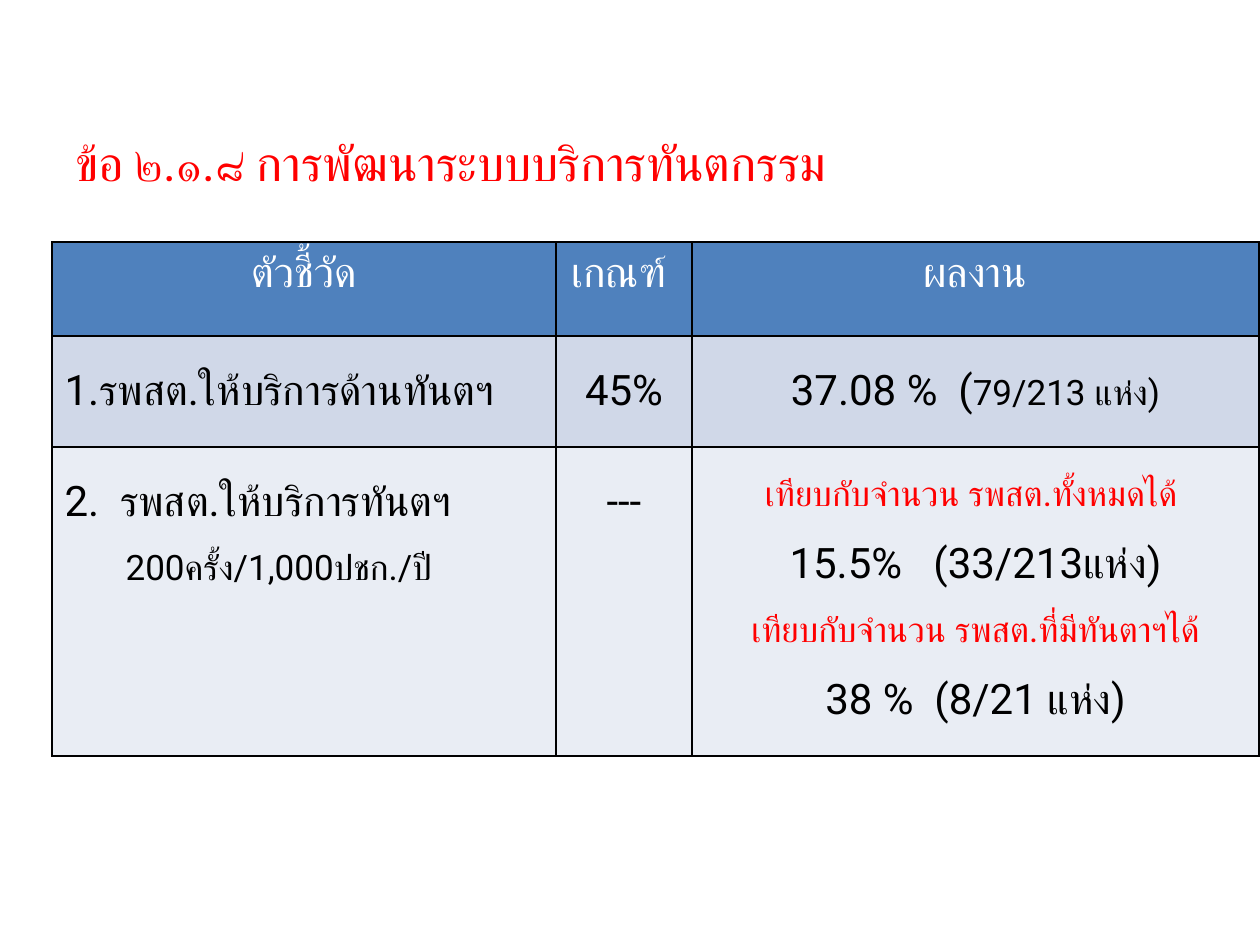
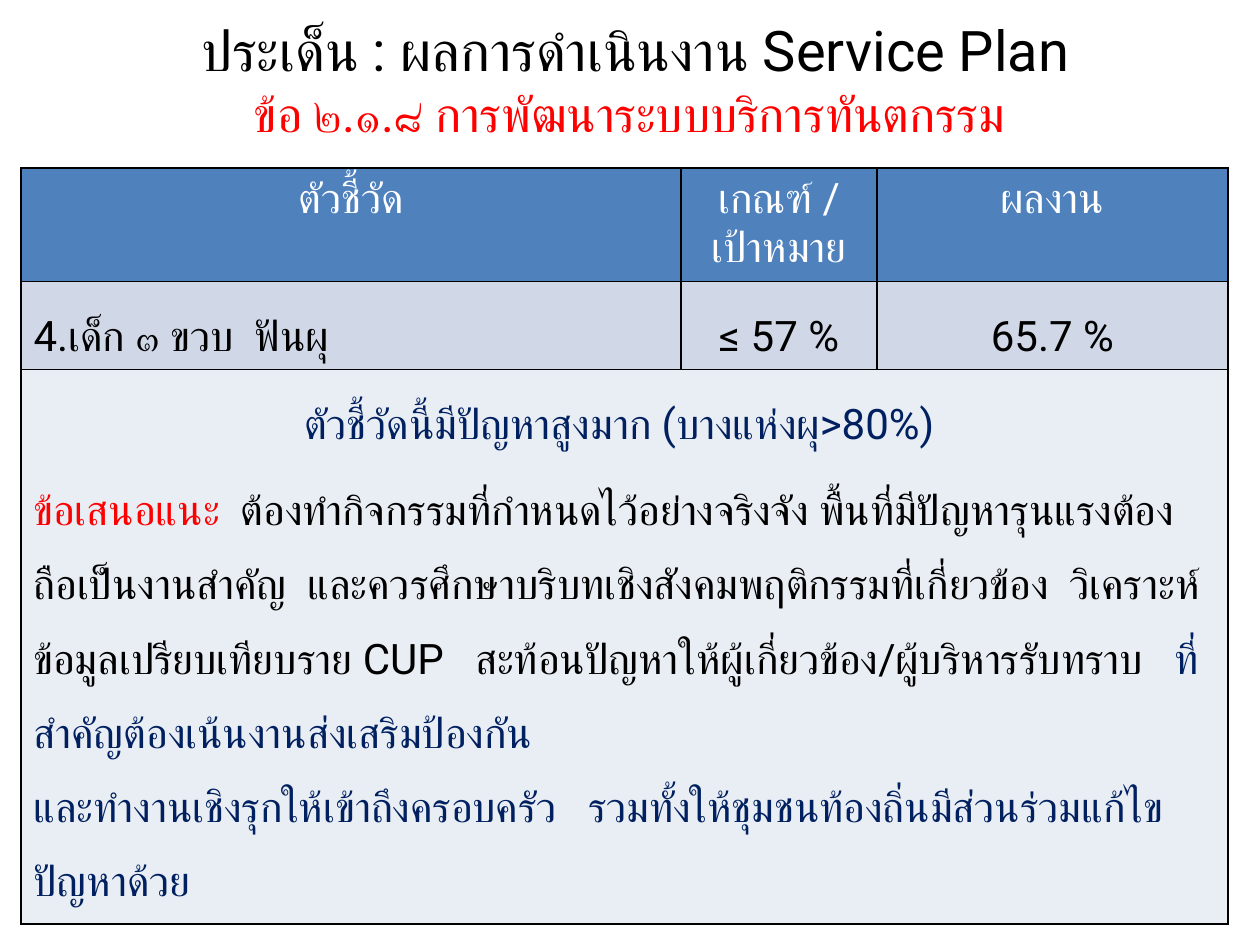
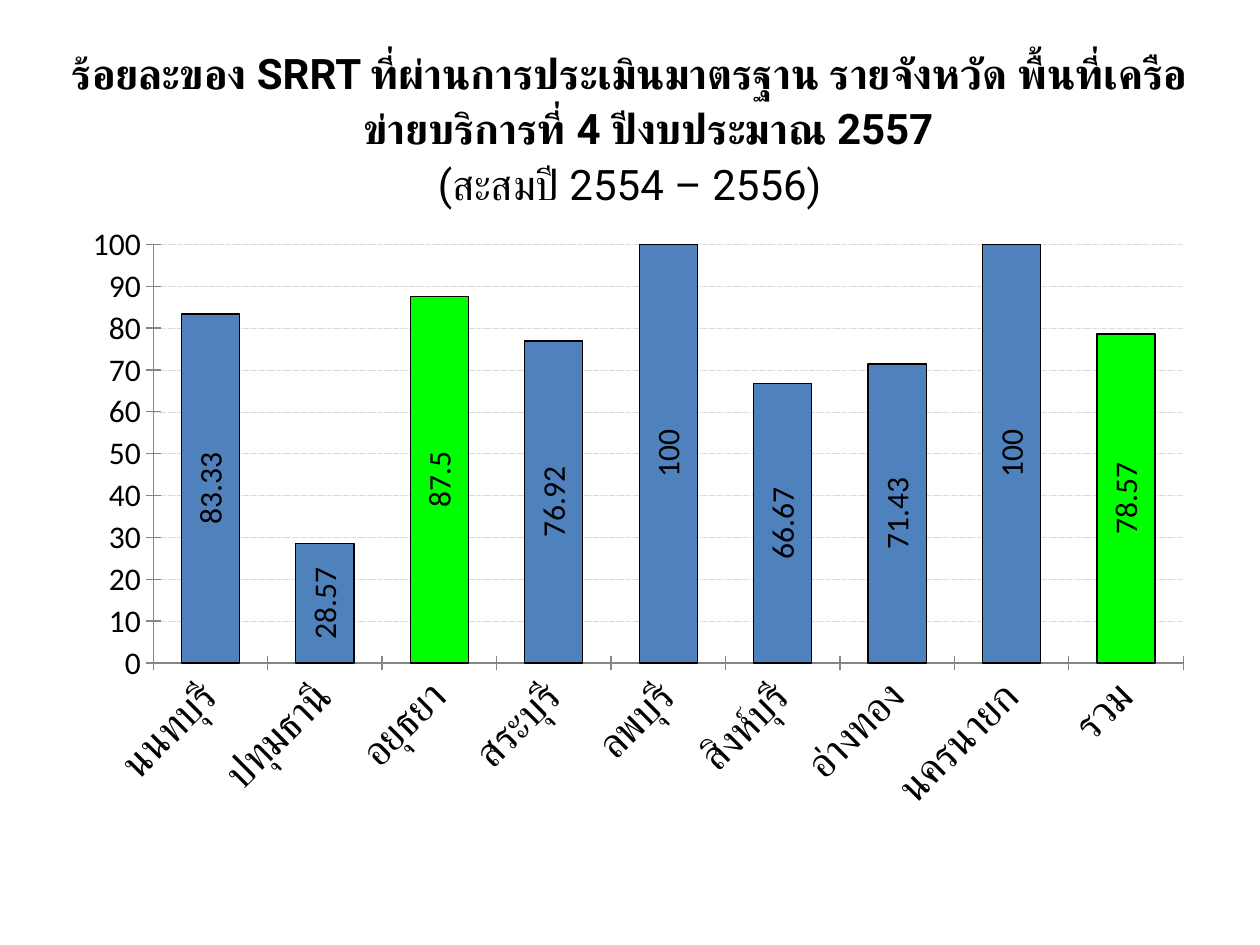
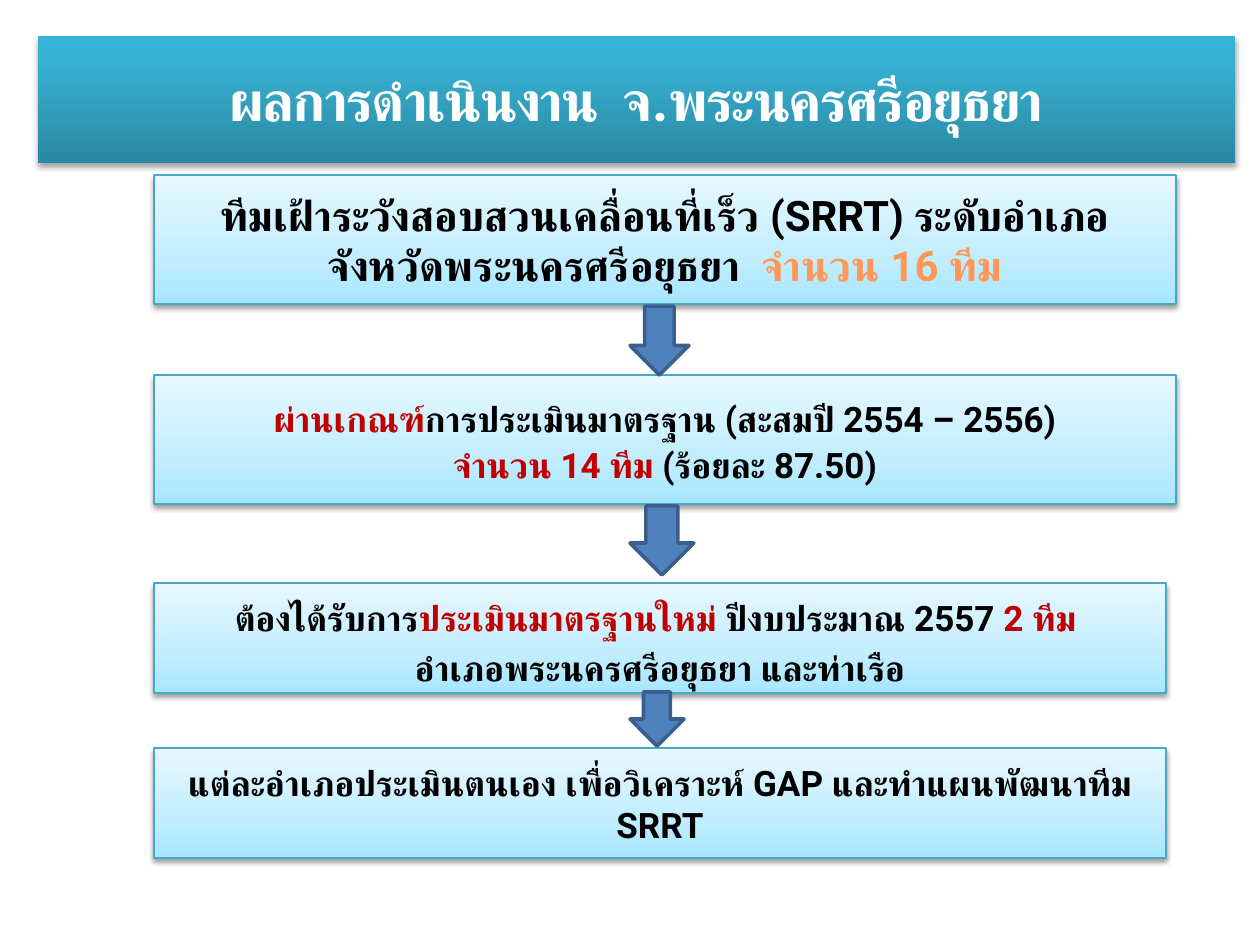
from dataclasses import dataclass

from lxml import etree
from pptx import Presentation
from pptx.chart.data import CategoryChartData
from pptx.dml.color import RGBColor
from pptx.enum.chart import XL_CHART_TYPE, XL_LABEL_POSITION, XL_TICK_MARK
from pptx.enum.dml import MSO_LINE
from pptx.enum.shapes import MSO_SHAPE
from pptx.enum.text import MSO_ANCHOR, PP_ALIGN
from pptx.oxml.ns import qn
from pptx.util import Emu, Pt

LEFT, CENTER = PP_ALIGN.LEFT, PP_ALIGN.CENTER
TOP, MIDDLE = MSO_ANCHOR.TOP, MSO_ANCHOR.MIDDLE
RECTANGLE, DOWN_ARROW = MSO_SHAPE.RECTANGLE, MSO_SHAPE.DOWN_ARROW
STACKED = XL_CHART_TYPE.COLUMN_STACKED
LABEL_CENTER = XL_LABEL_POSITION.CENTER
TICK_CROSS = XL_TICK_MARK.CROSS
DASH = MSO_LINE.SQUARE_DOT
PX_PER_INCH = 126
HANGING = 48


@dataclass(frozen=True)
class Gradient:
    stops: tuple[tuple[int, str], ...]
    angle: int


@dataclass(frozen=True)
class Theme:
    font: str = "Roboto"
    chart_font: str = "Calibri"
    black: str = "000000"
    white: str = "FFFFFF"
    red: str = "FF0000"
    dark_red: str = "C00000"
    navy: str = "002060"
    blue: str = "4F81BD"
    arrow_line: str = "3A5F8C"
    green: str = "00FF00"
    band: str = "D0D8E8"
    pale_band: str = "E9EDF4"
    grid: str = "D9D9D9"
    axis: str = "868686"
    box_line: str = "46AAC5"
    title_fill: Gradient = Gradient(((0, "2A88A2"), (80, "37B1D2"), (100, "34B4D6")), 270)
    box_fill: Gradient = Gradient(((0, "A7E6FF"), (35, "C1EDFF"), (100, "E7F8FF")), 270)
    orange: Gradient = Gradient(((0, "9D4700"), (78, "FF9856"), (100, "FFF5F1")), 90)
    title: int = 32
    subtitle: int = 28
    body: int = 24
    small: int = 20
    label: int = 18


THEME = Theme()


@dataclass(frozen=True)
class Span:
    text: str
    color: str | Gradient = THEME.black
    size: int = THEME.body
    bold: bool = False
    tracking: int = 0


@dataclass(frozen=True)
class Line:
    spans: tuple[Span, ...]
    align: PP_ALIGN = LEFT
    spacing: float = 1.0
    before: float = 0
    after: float = 0
    margin: int = 0
    indent: int = 0


@dataclass(frozen=True)
class Area:
    left: int
    top: int
    width: int
    height: int

    def emu(self) -> tuple[Emu, ...]:
        return tuple(px(n) for n in (self.left, self.top, self.width, self.height))


@dataclass(frozen=True)
class TableRow:
    height: int
    fill: str
    cells: tuple[tuple[Line, ...], ...]


@dataclass(frozen=True)
class Step:
    area: Area
    lines: tuple[Line, ...]


def px(length: int) -> Emu:
    return Emu(round(length * 914400 / PX_PER_INCH))


def rgb(color: str) -> RGBColor:
    return RGBColor.from_string(color)


# ---- Shared drawing ----

def add_color(parent, color: str):
    node = etree.SubElement(parent, qn("a:srgbClr"), val=color)
    return node


def set_gradient(fill, parent, gradient: Gradient) -> None:
    fill.background()
    node = etree.Element(qn("a:gradFill"), rotWithShape="1")
    stops = etree.SubElement(node, qn("a:gsLst"))
    for position, color in gradient.stops:
        add_color(etree.SubElement(stops, qn("a:gs"), pos=str(position * 1000)), color)
    etree.SubElement(node, qn("a:lin"), ang=str(gradient.angle * 60000), scaled="0")
    parent.replace(parent.find(qn("a:noFill")), node)


def set_shadow(shape, opacity: int, distance: float) -> None:
    shape.shadow.inherit = False
    effects = shape.element.spPr.find(qn("a:effectLst"))
    shadow = etree.SubElement(effects, qn("a:outerShdw"), blurRad=str(Pt(3.1)),
                              dist=str(Pt(distance)), dir="5400000", rotWithShape="0")
    etree.SubElement(add_color(shadow, THEME.black), qn("a:alpha"), val=str(opacity * 1000))


def write_span(para, span: Span) -> None:
    if span.text == "\n":
        para.add_line_break()
        return
    run = para.add_run()
    run.text = span.text
    font = run.font
    font.size, font.bold, font.name = Pt(span.size), span.bold, THEME.font
    properties = run._r.get_or_add_rPr()
    etree.SubElement(properties, qn("a:cs"), typeface=THEME.font)
    if span.tracking:
        properties.set("spc", str(span.tracking * 100))
    if isinstance(span.color, Gradient):
        set_gradient(font.fill, properties, span.color)
    else:
        font.color.rgb = rgb(span.color)


def write_lines(frame, lines: tuple[Line, ...]) -> None:
    frame.word_wrap = True
    for index, line in enumerate(lines):
        para = frame.add_paragraph() if index else frame.paragraphs[0]
        para.alignment, para.line_spacing = line.align, line.spacing
        para.space_before, para.space_after = Pt(line.before), Pt(line.after)
        properties = para._p.get_or_add_pPr()
        properties.set("marL", str(px(line.margin)))
        properties.set("indent", str(px(line.indent)))
        for span in line.spans:
            write_span(para, span)


def add_text(slide, area: Area, lines: tuple[Line, ...], anchor: MSO_ANCHOR = TOP) -> None:
    frame = slide.shapes.add_textbox(*area.emu()).text_frame
    frame.vertical_anchor = anchor
    write_lines(frame, lines)


def add_panel(slide, area: Area, lines: tuple[Line, ...], fill: Gradient,
              line_color: str | None, opacity: int, distance: float) -> None:
    panel = slide.shapes.add_shape(RECTANGLE, *area.emu())
    set_gradient(panel.fill, panel.element.spPr, fill)
    if line_color:
        panel.line.color.rgb = rgb(line_color)
        panel.line.width = Pt(0.75)
    else:
        panel.line.fill.background()
    set_shadow(panel, opacity, distance)
    panel.text_frame.vertical_anchor = MIDDLE
    write_lines(panel.text_frame, lines)


def add_arrow(slide, area: Area) -> None:
    arrow = slide.shapes.add_shape(DOWN_ARROW, *area.emu())
    arrow.shadow.inherit = False
    arrow.fill.solid()
    arrow.fill.fore_color.rgb = rgb(THEME.blue)
    arrow.line.color.rgb = rgb(THEME.arrow_line)
    arrow.line.width = Pt(2)


def set_borders(cell) -> None:
    properties = cell._tc.get_or_add_tcPr()
    for index, side in enumerate(("a:lnL", "a:lnR", "a:lnT", "a:lnB")):
        border = etree.Element(qn(side), w=str(Pt(1)))
        add_color(etree.SubElement(border, qn("a:solidFill")), THEME.black)
        properties.insert(index, border)


def add_indicator_table(slide, left: int, top: int, widths: tuple[int, ...],
                        rows: tuple[TableRow, ...]) -> None:
    area = Area(left, top, sum(widths), sum(row.height for row in rows))
    table = slide.shapes.add_table(len(rows), len(widths), *area.emu()).table
    table.first_row = table.horz_banding = False
    for column, width in zip(table.columns, widths):
        column.width = px(width)
    for row_index, row in enumerate(rows):
        table.rows[row_index].height = px(row.height)
        for column_index in range(len(widths)):
            cell = table.cell(row_index, column_index)
            cell.fill.solid()
            cell.fill.fore_color.rgb = rgb(row.fill)
            set_borders(cell)
            if column_index < len(row.cells):
                write_lines(cell.text_frame, row.cells[column_index])
        if len(row.cells) == 1:
            table.cell(row_index, 0).merge(table.cell(row_index, len(widths) - 1))


# ---- Recurring text ----

def loose(*spans: Span, align: PP_ALIGN = CENTER, after: float = 0, margin: int = 0) -> Line:
    return Line(spans, align, 1.5, after=after, margin=margin)


def header_row(height: int, *titles: str) -> TableRow:
    cells = tuple((Line((Span(title, THEME.white),), CENTER),) for title in titles)
    return TableRow(height, THEME.blue, cells)


def strong(text: str, color: str | Gradient = THEME.black, size: int = THEME.small) -> Span:
    return Span(text, color, size, bold=True)


TOPIC = "ข้อ ๒.๑.๘ การพัฒนาระบบบริการทันตกรรม"


# ---- Slides ----

def build_dental_results(slide) -> None:
    heading = Line((Span(TOPIC, THEME.red, THEME.subtitle),), before=5.6,
                   margin=HANGING, indent=-HANGING)
    add_text(slide, Area(63, 126, 1134, 624), (heading,))
    rows = (
        header_row(94, "ตัวชี้วัด", "เกณฑ์ ", "ผลงาน"),
        TableRow(111, THEME.band, (
            (loose(Span("1.รพสต.ให้บริการด้านทันตฯ"), align=LEFT),),
            (loose(Span("45%")),),
            (loose(Span("37.08 %  ("), Span("79/213 แห่ง)", size=THEME.small)),),
        )),
        TableRow(309, THEME.pale_band, (
            (loose(Span("2.  รพสต.ให้บริการทันตฯ"), align=LEFT),
             loose(Span("200ครั้ง/1,000ปชก./ปี", size=THEME.small), align=LEFT, margin=61)),
            (loose(Span("---")),),
            (loose(Span("เทียบกับจำนวน รพสต.ทั้งหมดได้ ", THEME.red, THEME.small)),
             loose(Span("15.5%   (33/213แห่ง)")),
             loose(Span("เทียบกับจำนวน รพสต.ที่มีทันตาฯได้", THEME.red, THEME.small)),
             loose(Span("38 %  (8/21 แห่ง)"))),
        )),
    )
    add_indicator_table(slide, 52, 242, (504, 136, 567), rows)


def build_child_teeth(slide) -> None:
    heading = Line((
        Span("ประเด็น : ผลการดำเนินงาน Service Plan", size=THEME.title),
        Span("\n"),
        Span(TOPIC + " ", THEME.red, THEME.subtitle),
    ), CENTER)
    add_text(slide, Area(32, 0, 1207, 158), (heading,), MIDDLE)
    advice = (
        loose(Span("ตัวชี้วัดนี้มีปัญหาสูงมาก (บางแห่งผุ>80%) ", THEME.navy), after=7),
        loose(
            Span("ข้อเสนอแนะ  ", THEME.red),
            Span("ต้องทำกิจกรรมที่กำหนดไว้อย่างจริงจัง พื้นที่มีปัญหารุนแรงต้องถือเป็นงานสำคัญ  "
                 "และควรศึกษาบริบทเชิงสังคมพฤติกรรมที่เกี่ยวข้อง  วิเคราะห์ข้อมูลเปรียบเทียบราย CUP   "
                 "สะท้อนปัญหาให้ผู้เกี่ยวข้อง/ผู้บริหารรับทราบ   "),
            Span("ที่สำคัญต้องเน้นงานส่งเสริมป้องกัน", THEME.navy),
            align=LEFT),
        loose(Span("และทำงานเชิงรุกให้เข้าถึงครอบครัว   "
                   "รวมทั้งให้ชุมชนท้องถิ่นมีส่วนร่วมแก้ไขปัญหาด้วย", THEME.navy), align=LEFT),
    )
    rows = (
        header_row(113, "ตัวชี้วัด", "เกณฑ์ / เป้าหมาย", "ผลงาน"),
        TableRow(81, THEME.band, (
            (loose(Span("4.เด็ก ๓ ขวบ  ฟันผุ"), align=LEFT),),
            (loose(Span("≤ 57 %")),),
            (loose(Span("65.7 %")),),
        )),
        TableRow(504, THEME.pale_band, (advice,)),
    )
    add_indicator_table(slide, 21, 168, (660, 196, 351), rows)


def set_plot_layout(chart, **fractions: float) -> None:
    plot_area = chart._chartSpace.chart.plotArea
    old = plot_area.find(qn("c:layout"))
    if old is not None:
        plot_area.remove(old)
    layout = etree.Element(qn("c:layout"))
    manual = etree.SubElement(layout, qn("c:manualLayout"))
    etree.SubElement(manual, qn("c:layoutTarget"), val="inner")
    for name in ("xMode", "yMode"):
        etree.SubElement(manual, qn(f"c:{name}"), val="edge")
    for name, value in fractions.items():
        etree.SubElement(manual, qn(f"c:{name}"), val=str(value))
    plot_area.insert(0, layout)


def rotate_text(text_parent, degrees: int) -> None:
    body = text_parent.find(qn("c:txPr")).find(qn("a:bodyPr"))
    body.set("rot", str(degrees * 60000))
    body.set("vert", "horz")


def style_axis(axis, size: int) -> None:
    axis.major_tick_mark = TICK_CROSS
    axis.tick_labels.font.size = Pt(size)
    axis.format.line.color.rgb = rgb(THEME.axis)


def build_team_chart(slide) -> None:
    data = CategoryChartData()
    data.categories = ("นนทบุรี", "ปทุมธานี", "อยุธยา", "สระบุรี", "ลพบุรี",
                       "สิงห์บุรี", "อ่างทอง", "นครนายก", "รวม")
    data.add_series("Series 1", (83.33, 28.57, 87.5, 76.92, 100, 66.67, 71.43, 100, 78.57))
    chart = slide.shapes.add_chart(STACKED, *Area(74, 214, 1132, 607).emu(), data).chart
    chart.has_legend = chart.has_title = False
    chart.font.name, chart.font.size = THEME.chart_font, Pt(THEME.label)
    chart.font.color.rgb = rgb(THEME.black)
    set_plot_layout(chart, x=0.07, y=0.05, w=0.91, h=0.69)

    # Axes
    style_axis(chart.category_axis, THEME.body)
    rotate_text(chart.category_axis._element, -45)
    values = chart.value_axis
    style_axis(values, THEME.label)
    values.minimum_scale, values.maximum_scale, values.major_unit = 0, 100, 10
    grid = values.major_gridlines.format.line
    grid.color.rgb, grid.width, grid.dash_style = rgb(THEME.grid), Pt(0.25), DASH

    # Columns and labels
    plot = chart.plots[0]
    plot.gap_width, plot.overlap, plot.vary_by_categories = 97, 100, False
    series = plot.series[0]
    highlighted = (series.points[index] for index in (2, 8))
    for item, color in ((series, THEME.blue), *((point, THEME.green) for point in highlighted)):
        item.format.fill.solid()
        item.format.fill.fore_color.rgb = rgb(color)
        item.format.line.color.rgb = rgb(THEME.black)
        item.format.line.width = Pt(0.75)
    labels = series.data_labels
    labels.show_value, labels.position = True, LABEL_CENTER
    labels.font.size = Pt(THEME.label)
    rotate_text(labels._element, -90)

    # Heading
    headings = (
        (strong("ร้อยละของ SRRT ที่ผ่านการประเมินมาตรฐาน รายจังหวัด "
                "พื้นที่เครือข่ายบริการที่ 4 ปีงบประมาณ 2557 ", size=THEME.body), 4.8),
        (Span("(สะสมปี 2554 – 2556)"), 0),
    )
    add_text(slide, Area(54, 36, 1151, 139), tuple(
        Line((span,), CENTER, 1.1, before, margin=HANGING, indent=-HANGING)
        for span, before in headings))


def build_team_steps(slide) -> None:
    title = Span("ผลการดำเนินงาน  จ.พระนครศรีอยุธยา", THEME.white, THEME.title, True, -1)
    add_panel(slide, Area(38, 36, 1197, 127), (Line((title,), CENTER),),
              THEME.title_fill, None, 35, 1.8)
    steps = (
        Step(Area(154, 175, 1022, 129), (
            Line((strong("ทีมเฝ้าระวังสอบสวนเคลื่อนที่เร็ว (SRRT) ระดับอำเภอ จังหวัดพระนครศรีอยุธยา  ",
                         size=THEME.body),
                  strong("จำนวน 16 ทีม", THEME.orange, THEME.body)), CENTER),)),
        Step(Area(154, 375, 1022, 129), (
            Line((strong("ผ่านเกณฑ์", THEME.dark_red),
                  strong("การประเมินมาตรฐาน (สะสมปี 2554 – 2556)")), CENTER, 1.1),
            Line((strong(" จำนวน 14 ทีม ", THEME.dark_red),
                  strong("(ร้อยละ 87.50) ")), CENTER, 1.1))),
        Step(Area(154, 583, 1012, 110), (
            Line((strong("ต้องได้รับการ"),
                  strong("ประเมินมาตรฐานใหม่ ", THEME.dark_red),
                  strong("ปีงบประมาณ 2557 "),
                  strong("2 ทีม ", THEME.dark_red)), CENTER, 1.2),
            Line((strong("อำเภอพระนครศรีอยุธยา และท่าเรือ"),), CENTER, 1.2))),
        Step(Area(154, 748, 1012, 110), (
            Line((strong("แต่ละอำเภอประเมินตนเอง เพื่อวิเคราะห์ GAP และทำแผนพัฒนาทีม SRRT"),),
                 CENTER),)),
    )
    for step in steps:
        add_panel(slide, step.area, step.lines, THEME.box_fill, THEME.box_line, 38, 1.6)
    for top, width, height in ((306, 59, 69), (506, 64, 69), (692, 54, 54)):
        add_arrow(slide, Area(630, top, width, height))


def main() -> None:
    deck = Presentation()
    deck.slide_width, deck.slide_height = px(1260), px(945)
    for build in (build_dental_results, build_child_teeth, build_team_chart, build_team_steps):
        build(deck.slides.add_slide(deck.slide_layouts[6]))
    deck.save("out.pptx")


if __name__ == "__main__":
    main()
